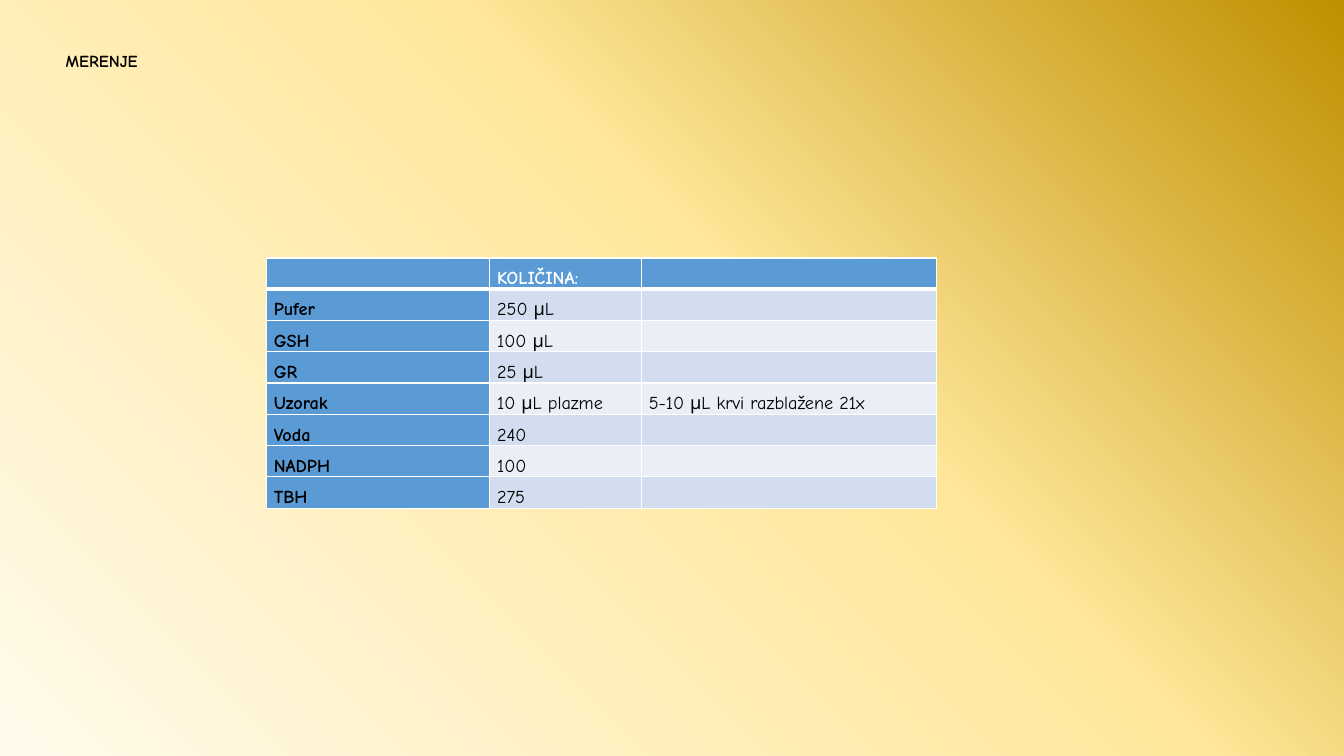
import copy

import pptx
import pptx.dml.color
import pptx.enum.text
import pptx.oxml
import pptx.oxml.ns
import pptx.util
from pptx.util import Cm

FONT = "Comic Neue"
COLORS = {
    "cream": "FFFAEB",
    "yellow": "FFE699",
    "gold": "BF9000",
    "blue": "5B9BD5",
    "band": "D2DEEF",
    "pale": "EAEFF7",
    "white": "FFFFFF",
    "black": "000000",
}
QUANTITIES = [
    ("", "KOLIČINA:", ""),
    ("Pufer", "250 μL", ""),
    ("GSH", "100 μL", ""),
    ("GR", "25 μL", ""),
    ("Uzorak", "10 μL plazme", "5-10 μL krvi razblažene 21x"),
    ("Voda", "240", ""),
    ("NADPH", "100", ""),
    ("TBH", "275", ""),
]


def rgb(name):
    """Return the named colour."""
    return pptx.dml.color.RGBColor.from_string(COLORS[name])


def write(frame, text, size=13, color="black", bold=False, align="LEFT", spacing=1.0):
    """Write one formatted paragraph, keeping the text size even when it is empty."""
    paragraph = frame.paragraphs[0]
    paragraph.alignment = getattr(pptx.enum.text.PP_ALIGN, align)
    paragraph.line_spacing = spacing
    if not text:
        end = pptx.oxml.parse_xml(
            f'<a:endParaRPr {pptx.oxml.ns.nsdecls("a")} sz="{size * 100}">'
            f'<a:latin typeface="{FONT}"/></a:endParaRPr>')
        paragraph._p.append(end)
        return
    run = paragraph.add_run()
    run.text = text
    run.font.name = FONT
    run.font.size = pptx.util.Pt(size)
    run.font.bold = bold
    run.font.color.rgb = rgb(color)


def paint_background(slide):
    """Fill the background with a diagonal three-colour gradient."""
    fill = slide.background.fill
    fill.gradient()
    fill.gradient_angle = 45
    stop_list = slide.element.find(".//" + pptx.oxml.ns.qn("a:gsLst"))
    stop_list.insert(1, copy.deepcopy(stop_list[0]))
    shades = [(0, "cream"), (0.58, "yellow"), (1, "gold")]
    for stop, (position, color) in zip(fill.gradient_stops, shades):
        stop.position = position
        stop.color.rgb = rgb(color)


def add_title(slide, text):
    """Place the title in the upper left corner."""
    title = slide.shapes.title
    title.left, title.top, title.width, title.height = Cm(1.4), Cm(1.14), Cm(2.87), Cm(1.55)
    title.text_frame.vertical_anchor = pptx.enum.text.MSO_ANCHOR.TOP
    title.text_frame.word_wrap = False
    title.text_frame.auto_size = pptx.enum.text.MSO_AUTO_SIZE.NONE
    write(title.text_frame, text, size=12, bold=True)


def set_borders(cell, **widths):
    """Draw white cell borders of the given widths in points."""
    properties = cell._tc.get_or_add_tcPr()
    for index, (side, width) in enumerate(widths.items()):
        properties.insert(index, pptx.oxml.parse_xml(
            f'<a:ln{side} {pptx.oxml.ns.nsdecls("a")} w="{pptx.util.Pt(width)}">'
            f'<a:solidFill><a:srgbClr val="{COLORS["white"]}"/></a:solidFill></a:ln{side}>'))


def add_quantity_table(slide):
    """Add the table of reagents and their quantities."""
    widths = [Cm(5.63), Cm(3.82), Cm(7.44)]
    row_height = Cm(0.76)
    table = slide.shapes.add_table(
        len(QUANTITIES), len(widths), Cm(6.71), Cm(6.5),
        sum(widths), row_height * len(QUANTITIES)).table
    for column, width in zip(table.columns, widths):
        column.width = width
    for r, entries in enumerate(QUANTITIES):
        table.rows[r].height = row_height
        header = r == 0
        for c, text in enumerate(entries):
            cell = table.cell(r, c)
            cell.margin_left = cell.margin_right = Cm(0.19)
            cell.margin_top = cell.margin_bottom = 0
            accent = header or c == 0
            cell.fill.solid()
            cell.fill.fore_color.rgb = rgb("blue" if accent else "band" if r % 2 else "pale")
            set_borders(cell, L=1, R=1, T=3 if r == 1 else 1, B=3 if header else 1)
            write(cell.text_frame, text, color="white" if header else "black",
                  bold=accent, align="JUSTIFY", spacing=1.5)


def main():
    """Build and save the slide."""
    deck = pptx.Presentation()
    deck.slide_width, deck.slide_height = Cm(33.87), Cm(19.05)
    slide = deck.slides.add_slide(deck.slide_layouts[5])
    paint_background(slide)
    add_title(slide, "MERENJE")
    add_quantity_table(slide)
    deck.save("out.pptx")


if __name__ == "__main__":
    main()
